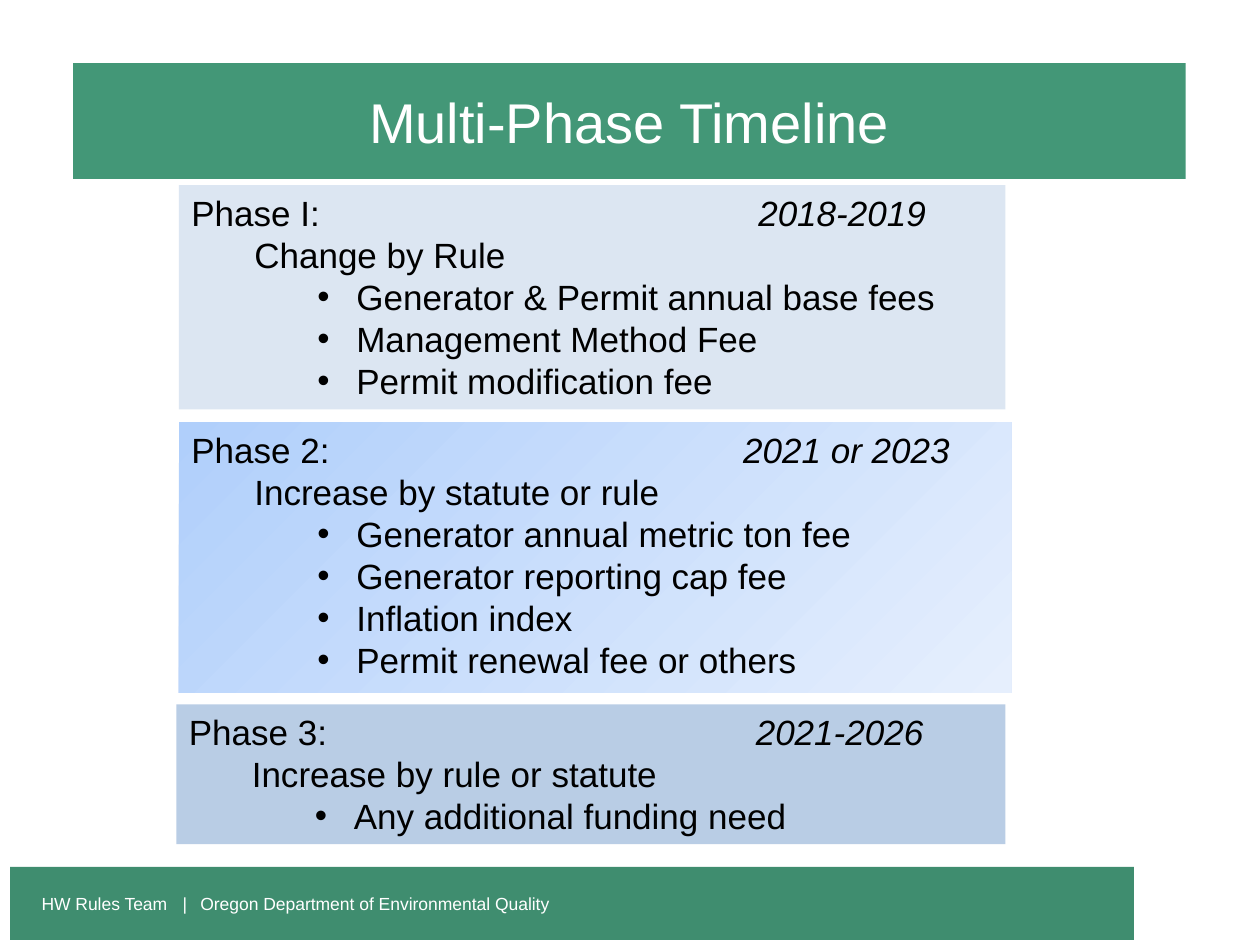
"""Build the multi-phase timeline slide."""
from dataclasses import dataclass

import pptx
import pptx.dml.color
import pptx.enum.shapes
import pptx.enum.text
import pptx.oxml
import pptx.oxml.ns
import pptx.util

Inches = pptx.util.Inches
RGB = pptx.dml.color.RGBColor
Align = pptx.enum.text.PP_ALIGN
Anchor = pptx.enum.text.MSO_ANCHOR

WHITE = RGB(0xFF, 0xFF, 0xFF)
BLACK = RGB(0x00, 0x00, 0x00)
GREEN = RGB(0x43, 0x97, 0x77)
PINE = RGB(0x3F, 0x8D, 0x6F)
PALE = RGB(0xDC, 0xE6, 0xF2)
STEEL = RGB(0xB9, 0xCD, 0xE5)
SKY = RGB(0xB0, 0xCF, 0xFB)
MIST = RGB(0xE6, 0xEF, 0xFD)


@dataclass
class Phase:
    """A phase panel with its date, method and fees."""
    box: tuple[float, float, float, float]
    fill: tuple[RGB, ...]
    name: str
    date: str
    tab: float
    method: str
    fees: tuple[str, ...]


PHASES = (
    Phase((1.42, 1.47, 6.56, 1.78), (PALE,), "Phase I:", "2018-2019", 4.5,
          "Change by Rule",
          ("Generator & Permit annual base fees", "Management Method Fee",
           "Permit modification fee")),
    Phase((1.42, 3.35, 6.61, 2.15), (SKY, MIST), "Phase 2:", "2021 or 2023", 4.38,
          "Increase by statute or rule",
          ("Generator annual metric ton fee", "Generator reporting cap fee",
           "Inflation index", "Permit renewal fee or others")),
    Phase((1.4, 5.59, 6.58, 1.11), (STEEL,), "Phase 3:", "2021-2026", 4.5,
          "Increase by rule or statute", ("Any additional funding need",)),
)


def panel(slide, box: tuple[float, ...], fill: tuple[RGB, ...], anchor=Anchor.TOP):
    """Draw a borderless rectangle and return its text frame."""
    kind = pptx.enum.shapes.MSO_SHAPE.RECTANGLE
    shape = slide.shapes.add_shape(kind, *map(Inches, box))
    shape.shadow.inherit = False
    shape.line.fill.background()
    if len(fill) == 1:
        shape.fill.solid()
        shape.fill.fore_color.rgb = fill[0]
    else:
        shape.fill.gradient()
        shape.fill.gradient_angle = 315
        for stop, color in zip(shape.fill.gradient_stops, fill):
            stop.color.rgb = color
    frame = shape.text_frame
    frame.word_wrap = True
    frame.vertical_anchor = anchor
    return frame


def style(para, size: int, color: RGB, align=Align.LEFT) -> None:
    """Set the font and alignment of a paragraph."""
    para.alignment = align
    para.font.name = "Arial"
    para.font.size = pptx.util.Pt(size)
    para.font.color.rgb = color


def indent(para, left: float, first: float = 0) -> None:
    """Set the left margin and first-line indent."""
    props = para._p.get_or_add_pPr()
    props.set("marL", str(Inches(left)))
    props.set("indent", str(Inches(first)))


def add(para, tag: str, **attrs: str):
    """Insert a paragraph property ahead of the default font."""
    props = para._p.get_or_add_pPr()
    node = pptx.oxml.parse_xml(f'<a:{tag} {pptx.oxml.ns.nsdecls("a")}/>')
    for key, value in attrs.items():
        node.set(key, value)
    props.find(pptx.oxml.ns.qn("a:defRPr")).addprevious(node)
    return node


def tabs(para, *stops: float) -> None:
    """Set left tab stops."""
    group = add(para, "tabLst")
    for stop in stops:
        node = add(para, "tab", pos=str(Inches(stop)), algn="l")
        group.append(node)


def draw(slide, phase: Phase) -> None:
    """Draw one phase panel."""
    frame = panel(slide, phase.box, phase.fill)
    head = frame.paragraphs[0]
    style(head, 20, BLACK)
    tabs(head, phase.tab)
    head.add_run().text = f"{phase.name}\t"
    date = head.add_run()
    date.text = phase.date
    date.font.italic = True
    for text in (phase.method, *phase.fees):
        para = frame.add_paragraph()
        para.text = text
        style(para, 20, BLACK)
        if text == phase.method:
            indent(para, 0.5)
        else:
            para.level = 2
            indent(para, 1.31, -0.31)
            add(para, "buFont", typeface="Arial")
            add(para, "buChar", char="•")


def main() -> None:
    """Build and save the slide."""
    deck = pptx.Presentation()
    deck.slide_width, deck.slide_height = Inches(10), Inches(7.5)
    slide = deck.slides.add_slide(deck.slide_layouts[6])

    title = panel(slide, (0.58, 0.5, 8.83, 0.92), (GREEN,), Anchor.MIDDLE)
    title.text = "Multi-Phase Timeline"
    style(title.paragraphs[0], 32, WHITE, Align.CENTER)

    for phase in PHASES:
        draw(slide, phase)

    foot = panel(slide, (0.08, 6.88, 8.92, 0.58), (PINE,), Anchor.MIDDLE)
    foot.margin_left = Inches(0.25)
    para = foot.paragraphs[0]
    para.text = "HW Rules Team\t|\tOregon Department of Environmental Quality"
    style(para, 10, WHITE)
    tabs(para, 1.12, 1.26)

    deck.save("out.pptx")


if __name__ == "__main__":
    main()
